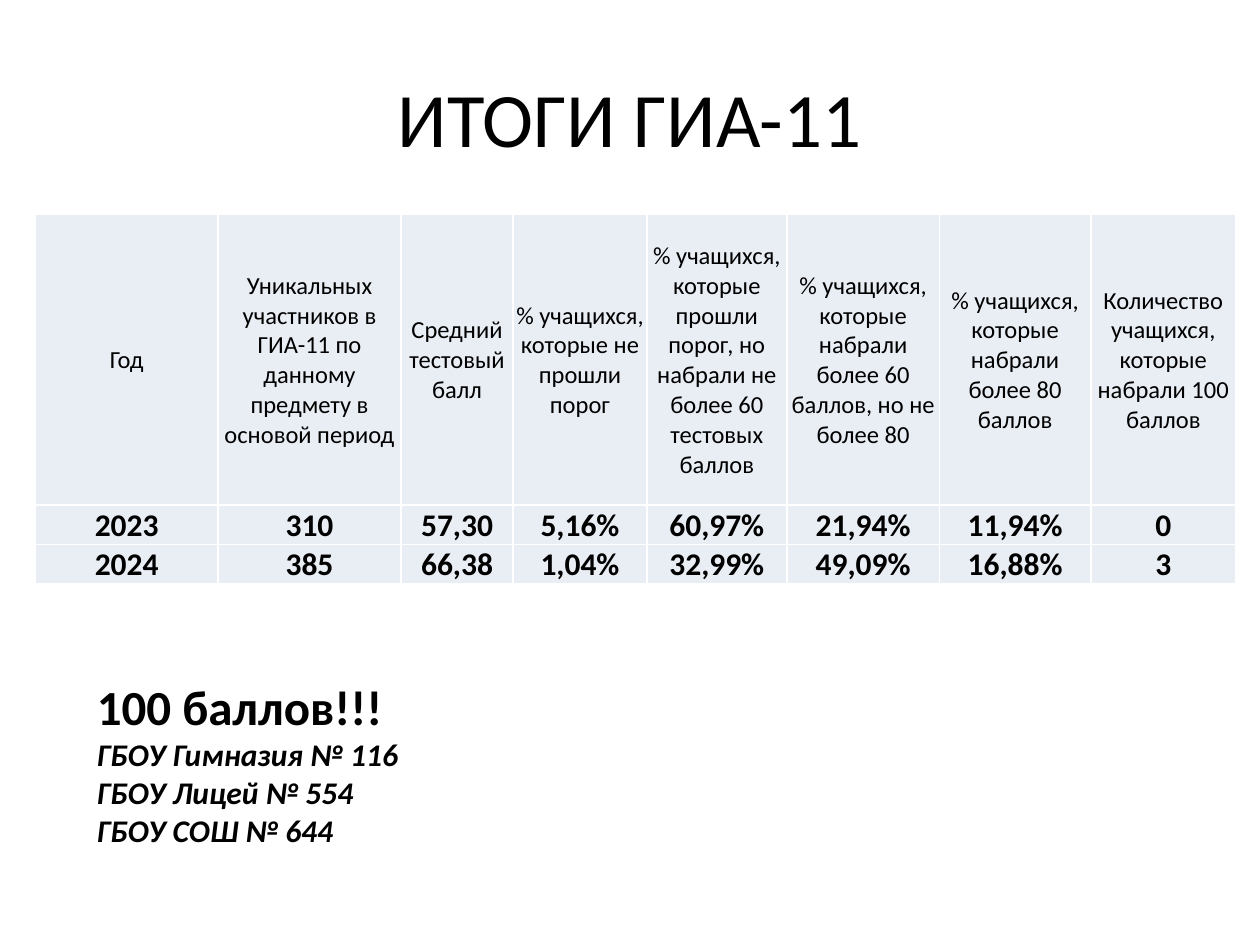
from lxml import etree
from pptx import Presentation
from pptx import util as u
from pptx.dml.color import RGBColor
from pptx.enum import text
from pptx.oxml import ns

WIDE, HIGH = 10, 7.5
INK, PALE, WHITE = "000000", "E9EDF4", "FFFFFF"
COLS = [1.45, 1.45, 0.89, 1.06, 1.11, 1.21, 1.2, 1.15]
ROWS = [2.31, 0.28, 0.28]
DATA = [
    ["Год",
     "Уникальных участников в ГИА-11 по данному предмету в основой период",
     "Средний тестовый балл",
     "% учащихся, которые не прошли порог",
     "% учащихся, которые прошли порог, но набрали не более 60 тестовых баллов",
     "% учащихся, которые набрали более 60 баллов, но не более 80",
     "% учащихся, которые набрали более 80 баллов",
     "Количество учащихся, которые набрали 100 баллов"],
    ["2023", "310", "57,30", "5,16%", "60,97%", "21,94%", "11,94%", "0"],
    ["2024", "385", "66,38", "1,04%", "32,99%", "49,09%", "16,88%", "3"],
]


def color(code):
    return RGBColor.from_string(code)


def area(left, top, width, height):
    """Turn shares of the slide into lengths."""
    return (u.Inches(left * WIDE), u.Inches(top * HIGH),
            u.Inches(width * WIDE), u.Inches(height * HIGH))


def add_run(para, words, size, bold=False, slant=False):
    run = para.add_run()
    run.text = words
    font = run.font
    font.name, font.size = "Calibri", u.Pt(size)
    font.bold, font.italic = bold, slant
    font.color.rgb = color(INK)


def add_edges(cell):
    props = cell._tc.get_or_add_tcPr()
    for spot, side in enumerate(("lnL", "lnR", "lnT", "lnB")):
        line = etree.Element(ns.qn("a:" + side), w=str(u.Pt(1)))
        fill = etree.SubElement(line, ns.qn("a:solidFill"))
        etree.SubElement(fill, ns.qn("a:srgbClr"), val=WHITE)
        props.insert(spot, line)


def add_title(slide, box):
    frame = slide.shapes.add_textbox(*box).text_frame
    frame.word_wrap = True
    frame.vertical_anchor = text.MSO_ANCHOR.MIDDLE
    para = frame.paragraphs[0]
    para.alignment = text.PP_ALIGN.CENTER
    add_run(para, "ИТОГИ ГИА-11", 44)


def add_scores(slide, box):
    table = slide.shapes.add_table(len(ROWS), len(COLS), *box).table
    table.first_row = table.horz_banding = False
    for col, part in zip(table.columns, COLS):
        col.width = int(box[2] * part / sum(COLS))
    for row, part in zip(table.rows, ROWS):
        row.height = int(box[3] * part / sum(ROWS))
    for r, line in enumerate(DATA):
        head = r == 0
        for c, words in enumerate(line):
            cell = table.cell(r, c)
            cell.margin_left = cell.margin_right = cell.margin_top = u.Inches(0.01)
            cell.margin_bottom = 0
            cell.vertical_anchor = (text.MSO_ANCHOR.MIDDLE if head
                                    else text.MSO_ANCHOR.BOTTOM)
            cell.fill.solid()
            cell.fill.fore_color.rgb = color(PALE)
            add_edges(cell)
            para = cell.text_frame.paragraphs[0]
            para.alignment = text.PP_ALIGN.CENTER
            add_run(para, words, 14 if head else 18, bold=not head)


def add_schools(slide, box):
    frame = slide.shapes.add_textbox(*box).text_frame
    frame.word_wrap = True
    frame.auto_size = text.MSO_AUTO_SIZE.SHAPE_TO_FIT_TEXT
    add_run(frame.paragraphs[0], "100 баллов!!!", 28, bold=True)
    for name in ("Гимназия № 116", "Лицей № 554", "СОШ № 644"):
        add_run(frame.add_paragraph(), "ГБОУ " + name, 18, bold=True, slant=True)


def main():
    deck = Presentation()
    deck.slide_width, deck.slide_height = u.Inches(WIDE), u.Inches(HIGH)
    slide = deck.slides.add_slide(deck.slide_layouts[6])
    # Heading
    add_title(slide, area(0.05, 0.04, 0.9, 1 / 6))
    # Results by year
    add_scores(slide, area(0.028, 1.7 / HIGH, 0.953, sum(ROWS) / HIGH))
    # Schools with full marks
    add_schools(slide, area(0.067, 5.32 / HIGH, 0.362, 1.48 / HIGH))
    deck.save("out.pptx")


if __name__ == "__main__":
    main()
